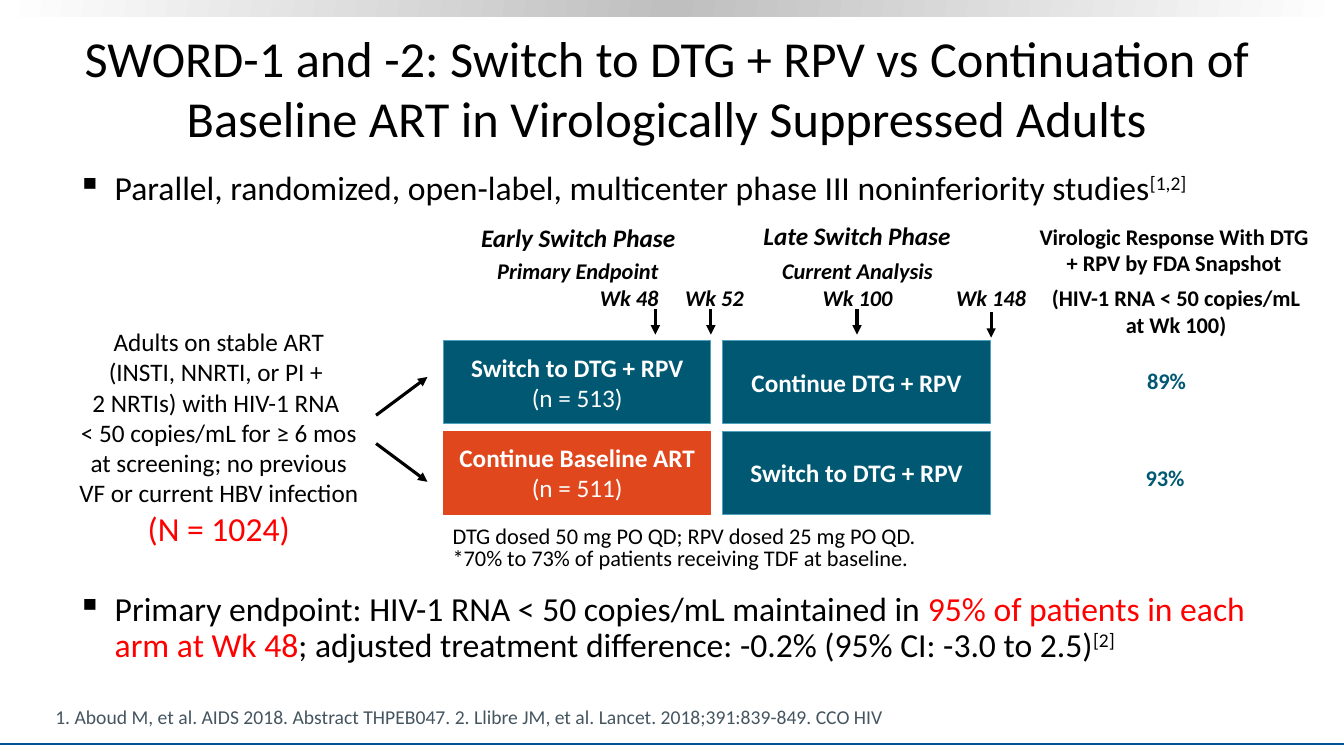
import copy

import pptx
import pptx.dml.color
import pptx.enum.shapes
import pptx.enum.text
import pptx.oxml.ns
import pptx.util
from lxml import etree

Inches = pptx.util.Inches
Pt = pptx.util.Pt
ALIGN = pptx.enum.text.PP_ALIGN
ANCHOR = pptx.enum.text.MSO_ANCHOR
RECTANGLE = pptx.enum.shapes.MSO_SHAPE.RECTANGLE
STRAIGHT = pptx.enum.shapes.MSO_CONNECTOR.STRAIGHT
qn = pptx.oxml.ns.qn

BLACK, WHITE, RED = "000000", "FFFFFF", "FF0000"
TEAL, ORANGE, BLUE, SLATE = "015873", "E1471D", "00539B", "455560"


def rgb(hex_color):
    return pptx.dml.color.RGBColor.from_string(hex_color)


def write(shape, *paragraphs, size=16, color=BLACK, bold=False, italic=False,
          align=ALIGN.CENTER, anchor=ANCHOR.TOP, wrap=True, bullet=None):
    """Fill a shape; a paragraph is a string or a list of (text, overrides) runs."""
    frame = shape.text_frame
    frame.word_wrap = wrap
    frame.vertical_anchor = anchor
    for index, runs in enumerate(paragraphs):
        paragraph = frame.add_paragraph() if index else frame.paragraphs[0]
        paragraph.alignment = align
        if bullet:
            paragraph.line_spacing = 0.9
            properties = paragraph._p.get_or_add_pPr()
            properties.set("marL", str(Inches(0.38)))
            properties.set("indent", str(Inches(-0.37)))
            bullet_color = etree.SubElement(properties, qn("a:buClr"))
            etree.SubElement(bullet_color, qn("a:srgbClr"), val=color)
            etree.SubElement(properties, qn("a:buChar"), char=bullet)
        if isinstance(runs, str):
            runs = [(runs, {})]
        for text, overrides in runs:
            for number, line in enumerate(text.split("\n")):
                if number:
                    paragraph.add_line_break()
                run = paragraph.add_run()
                run.text = line
                run.font.name = "Calibri"
                run.font.size = Pt(overrides.get("size", size))
                run.font.bold = overrides.get("bold", bold)
                run.font.italic = italic
                run.font.color.rgb = rgb(overrides.get("color", color))
                if overrides.get("superscript"):
                    run._r.get_or_add_rPr().set("baseline", "30000")


presentation = pptx.Presentation()
presentation.slide_width = Inches(13.33)
presentation.slide_height = Inches(7.5)
slide = presentation.slides.add_slide(presentation.slide_layouts[6])
shapes = slide.shapes

# Top band
band = shapes.add_shape(RECTANGLE, 0, 0, Inches(13.33), Inches(0.16))
band.shadow.inherit = False
band.line.fill.background()
band.fill.gradient()
band.fill.gradient_angle = 350
first_stop = band.fill.gradient_stops[0]._gs
first_stop.addnext(copy.deepcopy(first_stop))
for stop, (position, stop_color) in zip(
        band.fill.gradient_stops, [(0, WHITE), (0.5, "BFBFBF"), (1, WHITE)]):
    stop.position = position
    stop.color.rgb = rgb(stop_color)

# Study arms: two rows by two phases
ARM_WIDTH, ARM_HEIGHT = 2.65, 0.82
arms = [
    (0, 0, TEAL, "4DA1BB", "Switch to DTG + RPV", "(n = 513)"),
    (0, 1, ORANGE, ORANGE, "Continue Baseline ART", "(n = 511)"),
    (1, 0, TEAL, "4DA1BB", "Continue DTG + RPV", None),
    (1, 1, TEAL, "4DA1BB", "Switch to DTG + RPV", None),
]
for column, row, fill_color, line_color, treatment, count in arms:
    arm = shapes.add_shape(RECTANGLE, Inches(4.4 + 2.77 * column), Inches(3.38 + 0.9 * row),
                           Inches(ARM_WIDTH), Inches(ARM_HEIGHT))
    arm.shadow.inherit = False
    arm.fill.solid()
    arm.fill.fore_color.rgb = rgb(fill_color)
    arm.line.color.rgb = rgb(line_color)
    arm.line.width = Pt(0.75)
    paragraphs = [[(treatment, {"bold": True})]] + ([count] if count else [])
    write(arm, *paragraphs, size=18, color=WHITE, anchor=ANCHOR.MIDDLE, wrap=False)

# Footer rule, randomization arrows and week markers
lines = [
    (0, 7.38, 13.33, 7.38, BLUE, 1.5, False),
    (3.73, 4.4, 4.24, 4.78, BLACK, 2.25, True),
    (3.73, 4.12, 4.24, 3.74, BLACK, 2.25, True),
]
for week_x, week_y in [(6.5, 3.07), (7.05, 3.07), (8.5, 3.07), (9.83, 3.1)]:
    lines.append((week_x, week_y, week_x, week_y + 0.25, BLACK, 2.25, True))
for x1, y1, x2, y2, line_color, width, has_arrow in lines:
    connector = shapes.add_connector(STRAIGHT, Inches(x1), Inches(y1), Inches(x2), Inches(y2))
    connector.line.color.rgb = rgb(line_color)
    connector.line.width = Pt(width)
    if has_arrow:
        etree.SubElement(connector.line._get_or_add_ln(), qn("a:tailEnd"), type="triangle")
    etree.SubElement(connector._element.spPr, qn("a:effectLst"))

# Text: left, top, width, height, paragraphs, format
phase = {"size": 18, "bold": True, "italic": True}
week = {"bold": True, "italic": True, "wrap": False}
bullet_format = {"size": 24, "align": ALIGN.LEFT, "bullet": "▪"}
response = {"bold": True, "color": TEAL}
texts = [
    (0.67, 0.26, 11.89, 1.21,
     ["SWORD-1 and -2: Switch to DTG + RPV vs Continuation of "
      "Baseline ART in Virologically Suppressed Adults"],
     {"size": 36, "anchor": ANCHOR.MIDDLE}),
    (0.66, 1.65, 11.9, 0.47,
     [[("Parallel, randomized, open-label, multicenter phase III noninferiority studies", {}),
       ("[1,2]", {"superscript": True})]], bullet_format),
    (0.66, 5.83, 11.9, 0.84,
     [[("Primary endpoint: HIV-1 RNA < 50 copies/mL maintained in ", {}),
       ("95% of patients in each arm at Wk 48", {"color": RED}),
       ("; adjusted treatment difference: -0.2% (95% CI: -3.0 to 2.5)", {}),
       ("[2]", {"superscript": True})]], bullet_format),
    (0.67, 3.19, 3, 2.32,
     ["Adults on stable ART (INSTI, NNRTI, or PI + \n2 NRTIs) with HIV-1 RNA \n"
      "< 50 copies/mL for ≥ 6 mos at screening; no previous VF or current HBV infection",
      [("(N = 1024)", {"size": 24, "color": RED})]], {"size": 18}),
    (4.66, 2.16, 2.15, 0.4, ["Early Switch Phase"], {**phase, "wrap": False}),
    (7.29, 2.14, 2.42, 0.4, ["Late Switch Phase"], phase),
    (4.81, 2.5, 1.82, 0.64, ["Primary Endpoint", "Wk 48"], {**week, "align": ALIGN.RIGHT}),
    (6.69, 2.77, 0.79, 0.37, ["Wk 52"], week),
    (7.65, 2.5, 1.71, 0.64, ["Current Analysis", "Wk 100"], week),
    (9.38, 2.77, 0.9, 0.37, ["Wk 148"], week),
    (10.16, 2.16, 2.97, 0.64, ["Virologic Response With DTG + RPV by FDA Snapshot"],
     {"bold": True}),
    (10.3, 2.77, 2.73, 0.64, ["(HIV-1 RNA < 50 copies/mL\nat Wk 100)"], {"bold": True}),
    (11.22, 3.59, 0.7, 0.37, ["89%"], response),
    (11.26, 4.56, 0.59, 0.37, ["93%"], {**response, "wrap": False}),
    (4.39, 5.13, 4.97, 0.37, ["DTG dosed 50 mg PO QD; RPV dosed 25 mg PO QD."],
     {"align": ALIGN.LEFT}),
    (4.39, 5.35, 6.67, 0.37, ["*70% to 73% of patients receiving TDF at baseline."],
     {"align": ALIGN.LEFT}),
    (0.45, 6.95, 8.76, 0.33,
     ["1. Aboud M, et al. AIDS 2018. Abstract THPEB047. "
      "2. Llibre JM, et al. Lancet. 2018;391:839-849. CCO HIV"],
     {"size": 14, "color": SLATE, "align": ALIGN.LEFT, "anchor": ANCHOR.BOTTOM}),
]
for left, top, width, height, paragraphs, text_format in texts:
    box = shapes.add_textbox(Inches(left), Inches(top), Inches(width), Inches(height))
    write(box, *paragraphs, **text_format)

presentation.save("out.pptx")
